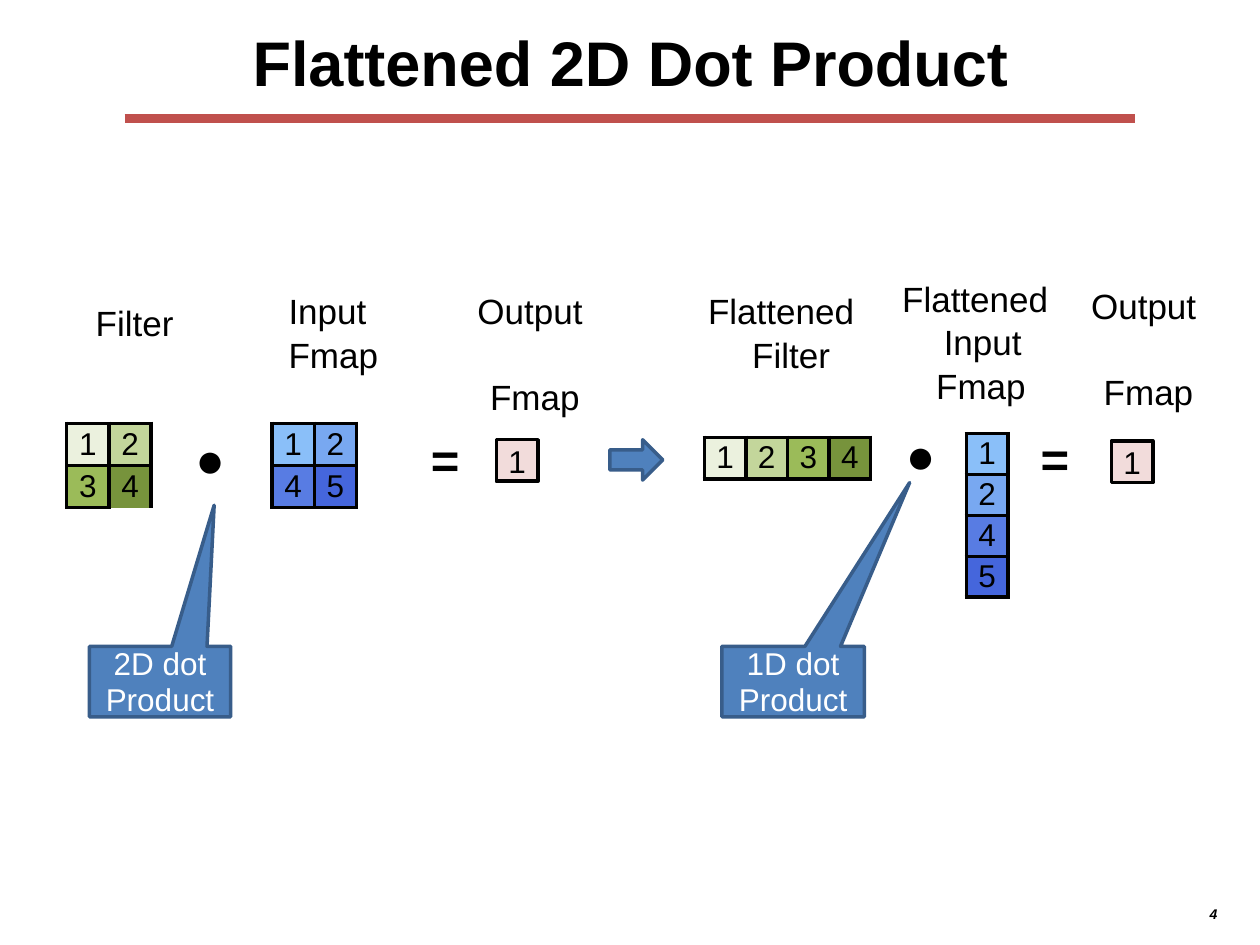
from dataclasses import dataclass

from lxml.etree import SubElement
from pptx import Presentation
from pptx.dml.color import RGBColor
from pptx.enum.shapes import MSO_CONNECTOR, MSO_SHAPE
from pptx.enum.text import MSO_ANCHOR, PP_ALIGN
from pptx.oxml.ns import qn
from pptx.util import Inches, Pt


@dataclass(frozen=True)
class Theme:
    font: str = "Arial"
    ink: str = "000000"
    white: str = "FFFFFF"
    rule: str = "C0504D"
    accent: str = "4F81BD"
    accent_line: str = "385D8A"
    output: str = "F2DCDB"
    greens: tuple = ("EBF1DE", "C3D69B", "9BBB59", "77933C")
    blues: tuple = ("8ABFF9", "78A8F1", "587CE3", "4566DC")
    title_size: int = 36
    operator_size: int = 28
    label_size: int = 20
    cell_size: int = 18
    number_size: int = 8
    border: float = 2.25
    outline: int = 2


@dataclass(frozen=True)
class Box:
    left: float
    top: float
    width: float
    height: float

    def inner(self, left, top, width, height):
        return Box(self.left + left, self.top + top, width, height)

    def emu(self):
        return [Inches(value) for value in (self.left, self.top, self.width, self.height)]


THEME = Theme()
CELL = 0.33


def color(value):
    return RGBColor.from_string(value)


def write(text_frame, lines, size, ink=THEME.ink, align=PP_ALIGN.LEFT, anchor=MSO_ANCHOR.TOP,
          bold=False, italic=False):
    text_frame.word_wrap = True
    text_frame.vertical_anchor = anchor
    text_frame.margin_left = text_frame.margin_right = text_frame.margin_bottom = 0
    text_frame.margin_top = Inches(0.01) if anchor == MSO_ANCHOR.TOP else 0
    text_frame.text = "\n".join(lines)
    for paragraph in text_frame.paragraphs:
        paragraph.alignment = align
        style_runs(paragraph, size, ink, bold, italic)


def style_runs(paragraph, size, ink, bold=False, italic=False):
    for run in paragraph.runs:
        run.font.name = THEME.font
        run.font.size = Pt(size)
        run.font.bold = bold
        run.font.italic = italic
        run.font.color.rgb = color(ink)


def add_title(slide, box):
    title = slide.shapes.title
    title.left, title.top, title.width, title.height = box.emu()
    write(title.text_frame, ["Flattened 2D Dot Product"], THEME.title_size,
          align=PP_ALIGN.CENTER, bold=True)


def add_rule(slide, box):
    left, top, width, height = box.emu()
    rule = slide.shapes.add_connector(MSO_CONNECTOR.STRAIGHT, left, top, left + width, top)
    rule.line.color.rgb = color(THEME.rule)
    rule.line.width = Pt(5.5)
    SubElement(rule._element.spPr, qn("a:effectLst"))


def add_label(slide, box, lines, indents, gap=1):
    text_frame = slide.shapes.add_textbox(*box.emu()).text_frame
    write(text_frame, lines, THEME.label_size)
    for index, (paragraph, indent) in enumerate(zip(text_frame.paragraphs, indents)):
        paragraph.space_before = Pt(gap if index else 1)
        paragraph._p.get_or_add_pPr().set("marL", str(Inches(indent)))


def add_output_label(slide, box):
    add_label(slide, box, ["Output", "Fmap"], [0.01, 0.11], gap=25)


def add_operator(slide, box, symbol, bold=False):
    text_frame = slide.shapes.add_textbox(*box.emu()).text_frame
    write(text_frame, [symbol], THEME.operator_size, bold=bold)


def add_shape(slide, kind, box, fill, line):
    shape = slide.shapes.add_shape(kind, *box.emu())
    shape.shadow.inherit = False
    shape.fill.solid()
    shape.fill.fore_color.rgb = color(fill)
    shape.line.color.rgb = color(line)
    shape.line.width = Pt(THEME.outline)
    return shape


def add_output_cell(slide, box):
    cell = add_shape(slide, MSO_SHAPE.RECTANGLE, box, THEME.output, THEME.ink)
    write(cell.text_frame, ["1"], THEME.cell_size, align=PP_ALIGN.CENTER, anchor=MSO_ANCHOR.MIDDLE)


def add_callout(slide, box, tip, lines):
    callout = add_shape(slide, MSO_SHAPE.RECTANGULAR_CALLOUT, box, THEME.accent, THEME.accent_line)
    callout.adjustments[0] = (tip.left - box.left) / box.width - 0.5
    callout.adjustments[1] = (tip.top - box.top) / box.height - 0.5
    write(callout.text_frame, lines, THEME.cell_size, THEME.white,
          PP_ALIGN.CENTER, MSO_ANCHOR.MIDDLE)
    for paragraph in callout.text_frame.paragraphs:
        paragraph.line_spacing = Pt(20.9)


def set_borders(cell, hidden=()):
    properties = cell._tc.get_or_add_tcPr()
    for position, side in enumerate(("lnL", "lnR", "lnT", "lnB")):
        border = SubElement(properties, qn(f"a:{side}"), w=str(Pt(THEME.border)))
        properties.insert(position, border)
        if side in hidden:
            SubElement(border, qn("a:noFill"))
        else:
            fill = SubElement(border, qn("a:solidFill"))
            SubElement(fill, qn("a:srgbClr"), val=THEME.ink)


def add_matrix(slide, box, rows, columns, values, fills, open_corner=False):
    table = slide.shapes.add_table(rows, columns, *box.emu()).table
    table.first_row = table.horz_banding = False
    for column in table.columns:
        column.width = Inches(box.width / columns)
    for row in table.rows:
        row.height = Inches(box.height / rows)
    for index, (cell, value, fill) in enumerate(zip(table.iter_cells(), values, fills)):
        cell.fill.solid()
        cell.fill.fore_color.rgb = color(fill)
        cell.margin_left = cell.margin_right = cell.margin_top = cell.margin_bottom = 0
        cell.vertical_anchor = MSO_ANCHOR.MIDDLE
        paragraph = cell.text_frame.paragraphs[0]
        paragraph.text = value
        paragraph.alignment = PP_ALIGN.CENTER
        style_runs(paragraph, THEME.cell_size, THEME.ink)
        is_last = index == len(values) - 1
        set_borders(cell, ("lnB",) if open_corner and is_last else ())


def add_two_dimensional_product(slide, box):
    add_label(slide, box.inner(0.25, 0.28, 0.7, 0.36), ["Filter"], [0.01])
    add_label(slide, box.inner(1.78, 0.19, 0.78, 0.69), ["Input", "Fmap"], [0.01, 0.01])
    add_output_label(slide, box.inner(3.28, 0.19, 0.9, 1.03))
    add_matrix(slide, box.inner(0.03, 1.26, 0.67, 0.67), 2, 2, "1234", THEME.greens, True)
    add_operator(slide, box.inner(1.05, 1.29, 0.26, 0.49), "●")
    add_matrix(slide, box.inner(1.66, 1.26, 0.67, 0.67), 2, 2, "1245", THEME.blues)
    add_operator(slide, box.inner(2.92, 1.3, 0.26, 0.49), "=", bold=True)
    add_output_cell(slide, box.inner(3.44, 1.39, CELL, CELL))
    add_callout(slide, box.inner(0.21, 3.03, 1.12, 0.56), box.inner(1.2, 1.91, 0, 0),
                ["2D dot", "Product"])


def add_one_dimensional_product(slide, box):
    add_label(slide, box.inner(0.11, 0.19, 1.22, 0.69), ["Flattened", "Filter"], [0.01, 0.36])
    add_label(slide, box.inner(1.65, 0.09, 1.22, 1.03), ["Flattened", "Input", "Fmap"],
              [0.01, 0.34, 0.28])
    add_output_label(slide, box.inner(3.15, 0.15, 0.9, 1.03))
    add_matrix(slide, box.inner(0.09, 1.37, 4 * CELL, CELL), 1, 4, "1234", THEME.greens)
    add_operator(slide, box.inner(1.69, 1.26, 0.26, 0.49), "●")
    add_matrix(slide, box.inner(2.17, 1.34, CELL, 1.3), 4, 1, "1245", THEME.blues)
    add_operator(slide, box.inner(2.76, 1.29, 0.26, 0.49), "=", bold=True)
    add_output_cell(slide, box.inner(3.32, 1.4, CELL, CELL))
    add_callout(slide, box.inner(0.23, 3.03, 1.13, 0.56), box.inner(1.72, 1.73, 0, 0),
                ["1D dot", "Product"])


def add_slide_number(slide, box):
    text_frame = slide.shapes.add_textbox(*box.emu()).text_frame
    write(text_frame, ["4"], THEME.number_size, bold=True, italic=True)


def main():
    presentation = Presentation()
    presentation.slide_width, presentation.slide_height = Inches(10), Inches(7.5)
    slide = presentation.slides.add_slide(presentation.slide_layouts[5])
    add_rule(slide, Box(0.99, 0.94, 8.02, 0))
    add_title(slide, Box(1.99, 0.18, 6.03, 0.63))
    add_two_dimensional_product(slide, Box(0.5, 2.1, 4.2, 3.7))
    add_shape(slide, MSO_SHAPE.RIGHT_ARROW, Box(4.84, 3.49, 0.42, 0.32),
              THEME.accent, THEME.accent_line)
    add_one_dimensional_product(slide, Box(5.5, 2.1, 4.2, 3.7))
    add_slide_number(slide, Box(9.6, 7.18, 0.15, 0.15))
    presentation.save("out.pptx")


if __name__ == "__main__":
    main()
